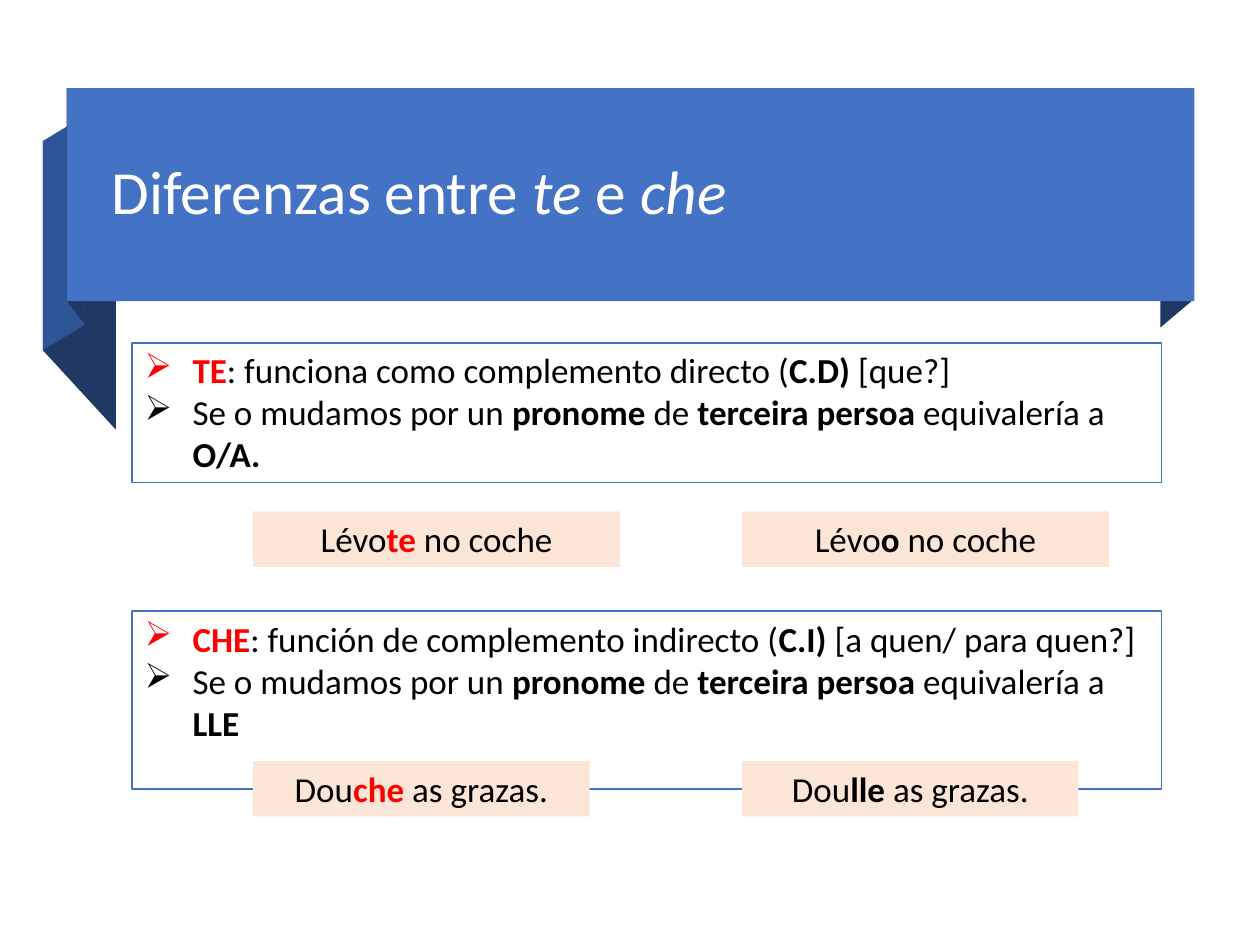
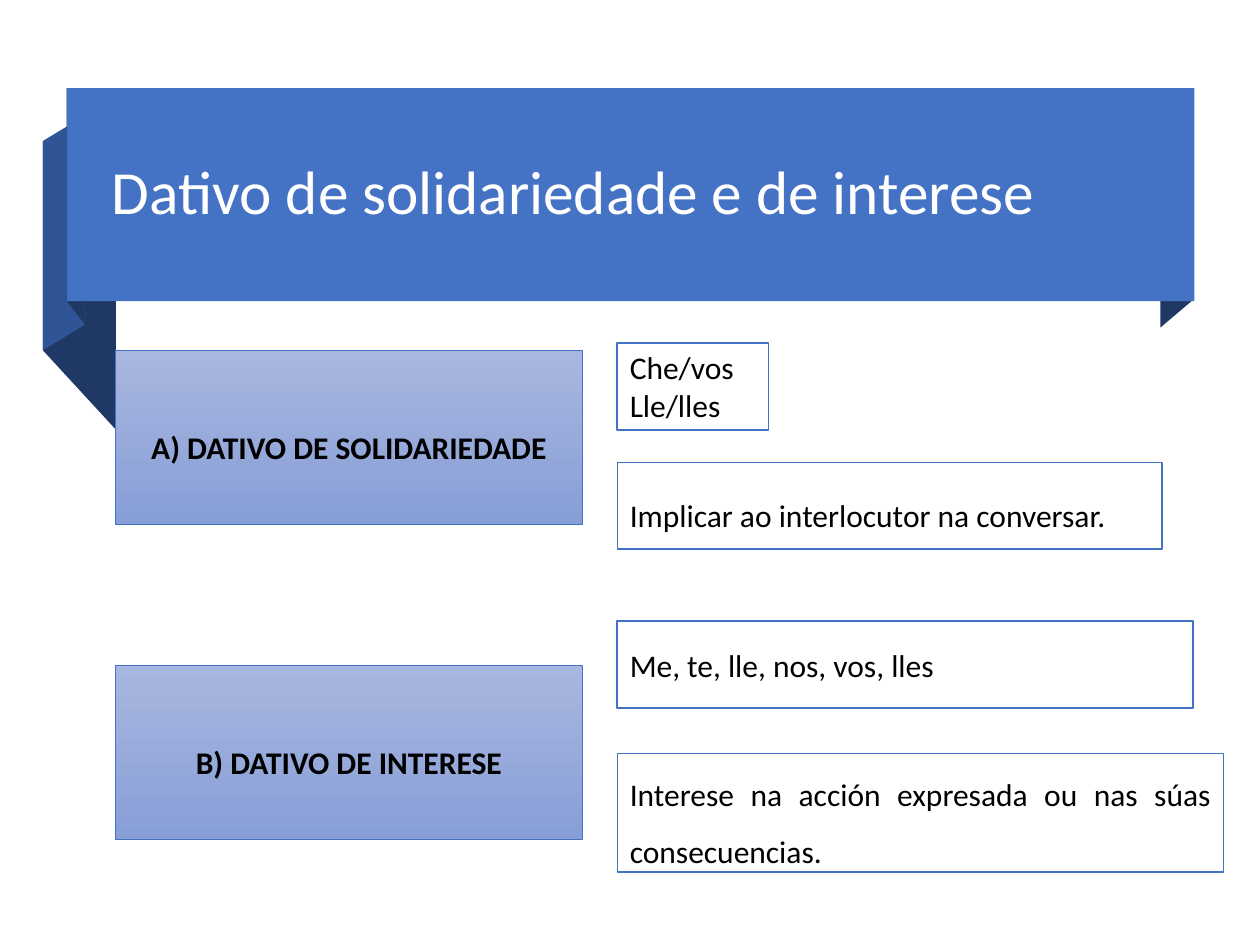
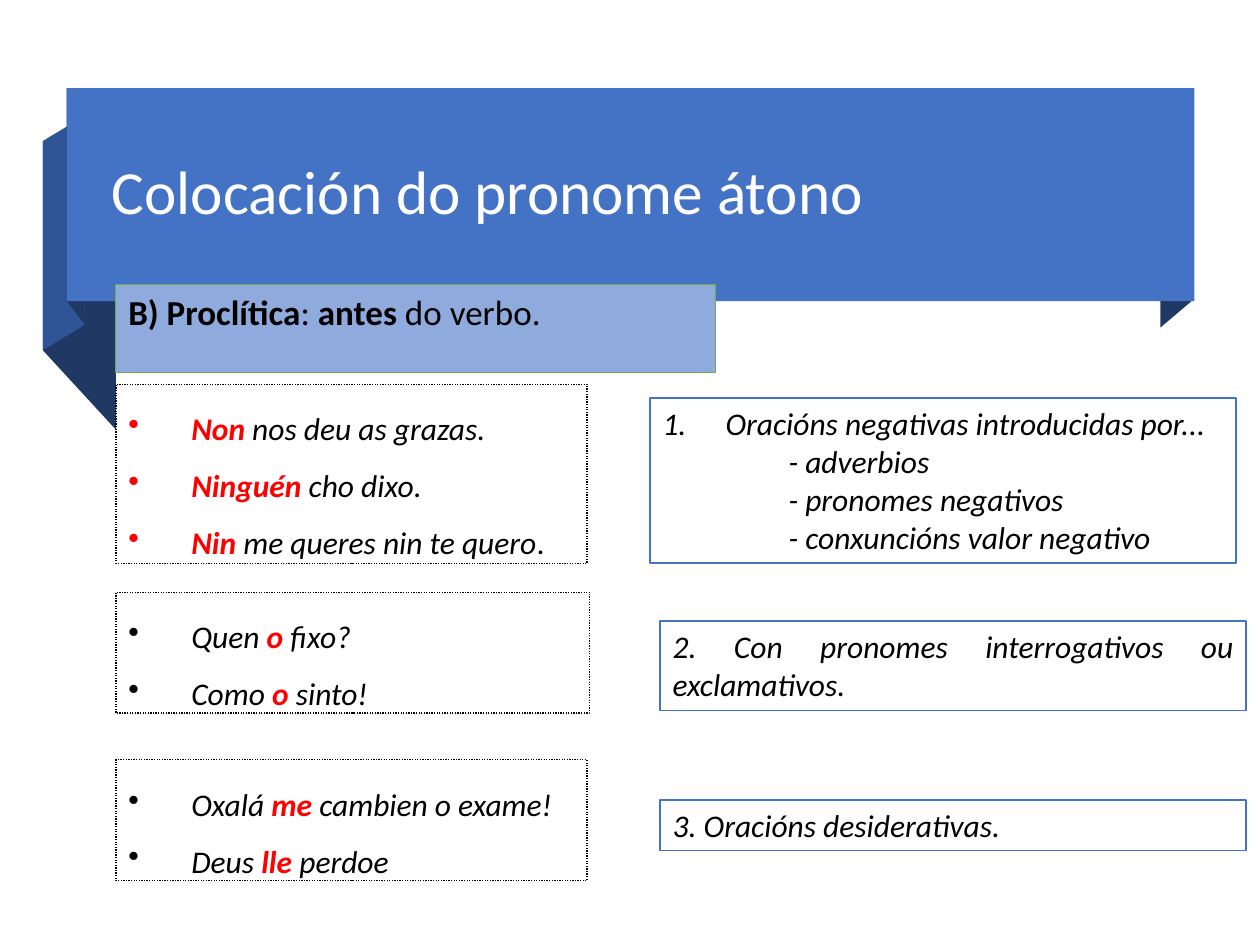
from lxml.etree import SubElement
from pptx import Presentation
from pptx.dml.color import RGBColor
from pptx.enum.dml import MSO_LINE
from pptx.enum.shapes import MSO_SHAPE
from pptx.enum.text import MSO_ANCHOR, PP_ALIGN
from pptx.oxml.ns import qn
from pptx.util import Inches, Pt

THEME = {
    "font": "Calibri",
    "band": "4472C4", "fold": "2F5597", "shade": "203864",
    "paper": "FFFFFF", "ink": "000000", "accent": "FF0000",
    "peach": "FBE5D6", "sky": "8FAADC", "green": "70AD47",
    "gradient": ("A8B7DF", "889ED7"),
    "title": 35, "large": 20, "body": 18,
}

# Ribbon outlines in hundredths of an inch
RIBBON = [
    ("shade", [(92, 341), (34, 278), (34, 112), (92, 175)]),
    ("fold", [(67, 258), (34, 278), (34, 112), (67, 92)]),
    ("shade", [(67, 257), (53, 239), (53, 70), (67, 89)]),
    ("shade", [(947, 238), (921, 260), (921, 91), (947, 70)]),
]
BAND = (0.53, 0.7, 8.95, 1.69)
TITLE = (0.79, 0.88, 8.42, 1.33)

# Looks shared by several boxes; a box may override single values
BASE = {"fill": None, "line": None, "size": "body", "style": "", "spacing": 1.0,
        "anchor": MSO_ANCHOR.TOP, "align": PP_ALIGN.JUSTIFY,
        "bullet": None, "indent": 0, "dash": None}
FRAME = BASE | {"fill": "paper", "line": ("band", 1)}
LOOKS = {
    "band": BASE | {"fill": "band"},
    "title": BASE | {"size": "title", "color": "paper", "spacing": 0.9,
                     "anchor": MSO_ANCHOR.MIDDLE, "align": PP_ALIGN.LEFT},
    "rule": FRAME | {"size": "large", "align": PP_ALIGN.LEFT,
                     "bullet": "➢", "indent": 0.38},
    "sample": BASE | {"fill": "peach", "size": "large", "align": PP_ALIGN.CENTER},
    "heading": BASE | {"fill": "gradient", "line": ("band", 0.5), "style": "b",
                       "spacing": 1.5, "anchor": MSO_ANCHOR.MIDDLE,
                       "align": PP_ALIGN.CENTER},
    "note": FRAME | {"anchor": MSO_ANCHOR.MIDDLE},
    "examples": BASE | {"line": ("ink", 0.75), "dash": MSO_LINE.ROUND_DOT,
                        "style": "i", "spacing": 1.5, "bullet": "•", "indent": 0.5},
    "case": FRAME | {"style": "i"},
    "label": BASE | {"fill": "sky", "line": ("green", 0.5), "size": "large"},
}

LEFT, RULE_LEFT = 0.92, 1.05
SAMPLE_COLUMNS = (2.01, 5.89)
NOTE_LEFT, CASE_LEFT = 4.9, 5.24
WIDE = {"spacing": 1.5}


def replacement(pronoun):
    """Line telling which third person pronoun takes the place."""
    return ["Se o mudamos por un ", ("pronome ", "b"), "de ",
            ("terceira persoa ", "b"), "equivalería a ", (pronoun, "b")]


def sample_pair(top, width, verb, pronouns, ending):
    """The same sentence with each pronoun, one in each sample column."""
    return [("sample", (left, top, width, 0.44), [[verb, pronoun, ending]])
            for left, pronoun in zip(SAMPLE_COLUMNS, pronouns)]


# A paragraph is a list of spans: plain text, or (text, flags) with
# b bold, i italic, r accent colour, n plain.
# A box is (look, place, paragraphs[, overrides]).
SLIDES = [
    (["Diferenzas entre ", ("te", "i"), " e ", ("che", "i")], [
        ("rule", (RULE_LEFT, 2.72, 8.17, 1.11), [
            [("TE", "br"), ": funciona como complemento directo (",
             ("C.D)", "b"), " [que?]"],
            replacement("O/A.")]),
        *sample_pair(4.06, 2.91, "Lévo", [("te", "br"), ("o", "b")], " no coche"),
        ("rule", (RULE_LEFT, 4.85, 8.17, 1.41), [
            [("CHE", "br"), ": función de complemento indirecto (",
             ("C.I) ", "b"), "[a quen/ para quen?]"],
            replacement("LLE")]),
        *sample_pair(6.04, 2.67, "Dou", [("che", "br"), ("lle", "b")], " as grazas."),
    ]),
    (["Dativo de solidariedade e de interese"], [
        ("heading", (LEFT, 5.28, 3.7, 1.38), [["B) DATIVO DE INTERESE"]]),
        ("heading", (LEFT, 2.78, 3.7, 1.38), [["A) DATIVO DE SOLIDARIEDADE"]]),
        ("note", (NOTE_LEFT, 2.72, 1.2, 0.69), [["Che/vos"], ["Lle/lles"]]),
        ("note", (NOTE_LEFT, 3.67, 4.32, 0.69),
         [["Implicar ao interlocutor na conversar."]], WIDE),
        ("note", (NOTE_LEFT, 4.93, 4.57, 0.69), [["Me, te, lle, nos, vos, lles"]]),
        ("note", (NOTE_LEFT, 5.98, 4.81, 0.94),
         [["Interese na acción expresada ou nas súas consecuencias."]], WIDE),
    ]),
    (["Colocación do pronome átono"], [
        ("examples", (LEFT, 3.05, 3.74, 1.42), [
            [("Non", "bir"), " nos deu as grazas."],
            [("Ninguén", "bir"), " cho dixo."],
            [("Nin", "bir"), " me queres nin te quero", (".", "n")]]),
        ("case", (5.16, 3.16, 4.65, 1.31), [
            ["Oracións negativas introducidas por..."],
            ["- adverbios"], ["- pronomes negativos"],
            ["- conxuncións valor negativo"]],
         {"bullet": "number", "indent": 0.5, "sub_indent": 1}),
        ("examples", (LEFT, 4.7, 3.76, 0.96), [
            ["Quen ", ("o", "bir"), " fixo?"],
            ["Como ", ("o", "bir"), " sinto!"]]),
        ("case", (CASE_LEFT, 4.93, 4.65, 0.71),
         [["2. Con pronomes interrogativos ou exclamativos."]]),
        ("examples", (LEFT, 6.03, 3.74, 0.96), [
            ["Oxalá ", ("me ", "bir"), "cambien o exame!"],
            ["Deus ", ("lle", "bir"), " perdoe"]]),
        ("case", (CASE_LEFT, 6.35, 4.65, 0.4), [["3. Oracións desiderativas."]]),
        ("label", (LEFT, 2.26, 4.76, 0.7),
         [[("B) Proclítica", "b"), ": ", ("antes ", "b"), "do verbo."]]),
    ]),
]


def colour(name):
    return RGBColor.from_string(THEME[name])


def assign(target, values):
    for name, value in values.items():
        setattr(target, name, value)


def paint(shape, fill, line=None, dash=None):
    shape.shadow.inherit = False
    if fill == "gradient":
        shape.fill.gradient()
        shape.fill.gradient_angle = 270
        for stop, value in zip(shape.fill.gradient_stops, THEME["gradient"]):
            stop.color.rgb = RGBColor.from_string(value)
    elif fill:
        shape.fill.solid()
        shape.fill.fore_color.rgb = colour(fill)
    else:
        shape.fill.background()
    if line:
        name, width = line
        shape.line.color.rgb = colour(name)
        assign(shape.line, {"width": Pt(width), "dash_style": dash})
    else:
        shape.line.fill.background()


def set_indent(para, left, bullet=None):
    """Indent a paragraph, hanging when it has a bullet."""
    settings = para._p.get_or_add_pPr()
    settings.set("marL", str(Inches(left)))
    settings.set("indent", str(-Inches(left) if bullet else 0))
    if bullet == "number":
        SubElement(settings, qn("a:buAutoNum"), type="arabicPeriod")
    elif bullet:
        SubElement(settings, qn("a:buChar"), char=bullet)


def write(frame, paragraphs, look):
    assign(frame, {"word_wrap": True, "vertical_anchor": look["anchor"]})
    for index, spans in enumerate(paragraphs):
        para = frame.paragraphs[0] if index == 0 else frame.add_paragraph()
        if index and "sub_indent" in look:
            set_indent(para, look["sub_indent"])
        elif look["bullet"]:
            set_indent(para, look["indent"], look["bullet"])
        assign(para, {"alignment": look["align"], "line_spacing": look["spacing"]})
        for item in spans:
            text, flags = (item, look["style"]) if isinstance(item, str) else item
            span = para.add_run()
            span.text = text
            assign(span.font, {"name": THEME["font"], "size": Pt(THEME[look["size"]]),
                               "bold": "b" in flags, "italic": "i" in flags})
            span.font.color.rgb = colour(
                "accent" if "r" in flags else look.get("color", "ink"))


def add_box(page, kind, place, paragraphs=(), overrides=None):
    look = LOOKS[kind] | (overrides or {})
    box = page.shapes.add_shape(MSO_SHAPE.RECTANGLE, *map(Inches, place))
    paint(box, look["fill"], look["line"], look["dash"])
    write(box.text_frame, paragraphs, look)


def add_ribbon_title(page, spans):
    for fill, points in RIBBON:
        builder = page.shapes.build_freeform(*points[0], scale=Inches(0.01))
        builder.add_line_segments(points[1:], close=True)
        paint(builder.convert_to_shape(), fill)
    add_box(page, "band", BAND)
    box = page.shapes.add_textbox(*map(Inches, TITLE))
    write(box.text_frame, [spans], LOOKS["title"])


def main():
    deck = Presentation()
    assign(deck, {"slide_width": Inches(10), "slide_height": Inches(7.5)})
    for title, boxes in SLIDES:
        page = deck.slides.add_slide(deck.slide_layouts[6])
        add_ribbon_title(page, title)
        for box in boxes:
            add_box(page, *box)
    deck.save("out.pptx")


if __name__ == "__main__":
    main()
